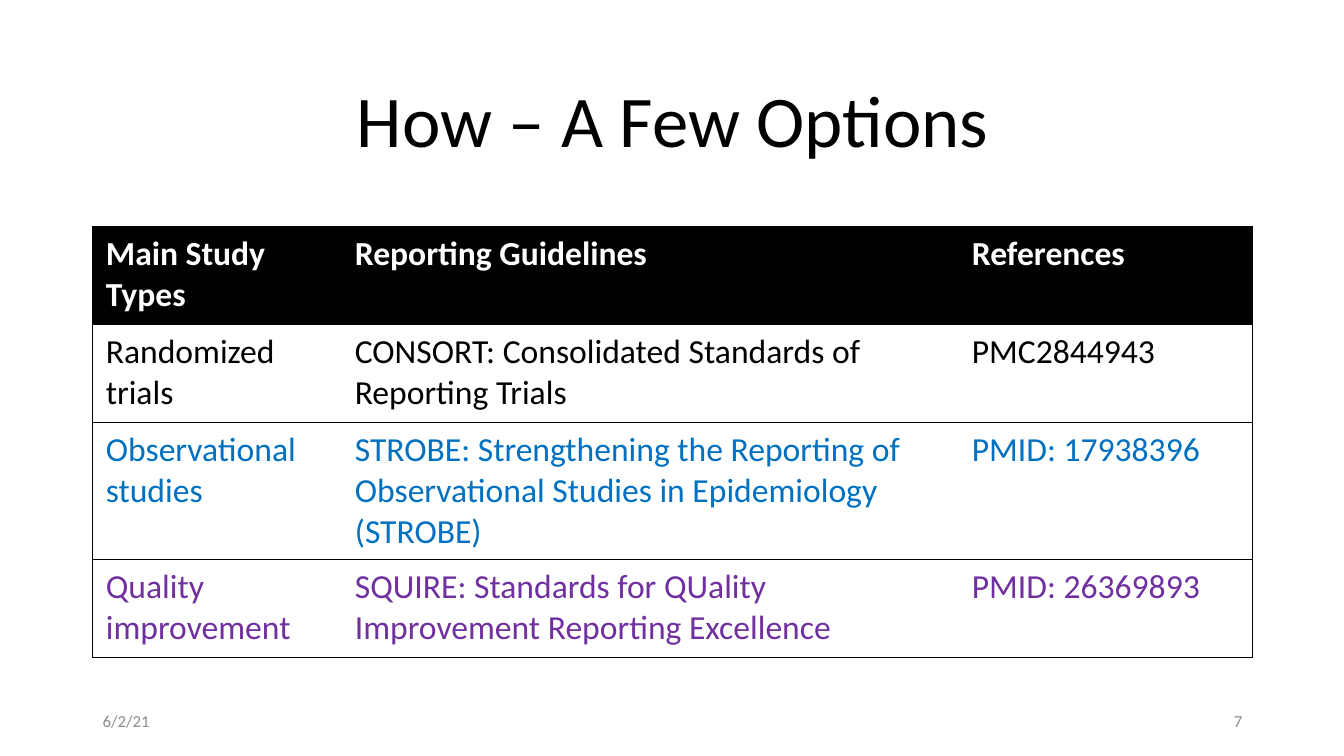
"""Build a slide that lists reporting guidelines by study type."""
from dataclasses import dataclass

from lxml import etree
from pptx import Presentation
from pptx.dml.color import RGBColor
from pptx.enum.text import MSO_ANCHOR, MSO_AUTO_SIZE, PP_ALIGN
from pptx.oxml.ns import qn
from pptx.util import Inches, Pt

LEFT, CENTER, RIGHT = PP_ALIGN.LEFT, PP_ALIGN.CENTER, PP_ALIGN.RIGHT
MIDDLE = MSO_ANCHOR.MIDDLE
NO_AUTOFIT = MSO_AUTO_SIZE.NONE


@dataclass(frozen=True)
class Theme:
    font: str = "Calibri"
    black: str = "000000"
    white: str = "FFFFFF"
    blue: str = "0070C0"
    purple: str = "7030A0"
    gray: str = "8C8C8C"
    title_size: int = 52
    table_size: int = 24
    footer_size: int = 12
    rule_width: float = 0.5


class SlideBuilder:
    def __init__(self, slide, theme):
        self.slide = slide
        self.theme = theme

    def add_text(self, frame, text, size, color, align=LEFT, bold=False):
        paragraph = frame.paragraphs[0]
        paragraph.alignment = align
        run = paragraph.add_run()
        run.text = text
        run.font.name = self.theme.font
        run.font.size = Pt(size)
        run.font.bold = bold
        run.font.color.rgb = RGBColor.from_string(color)
        return paragraph

    def title(self, text, left, top, width, height):
        heading = self.slide.shapes.title
        heading.left, heading.top = Inches(left), Inches(top)
        heading.width, heading.height = Inches(width), Inches(height)
        frame = heading.text_frame
        frame.auto_size = NO_AUTOFIT
        frame.vertical_anchor = MIDDLE
        paragraph = self.add_text(frame, text, self.theme.title_size,
                                  self.theme.black, CENTER)
        paragraph.line_spacing = 0.9

    def footer(self, text, left, align):
        box = self.slide.shapes.add_textbox(
            Inches(left), Inches(6.95), Inches(3), Inches(0.4))
        frame = box.text_frame
        frame.word_wrap = True
        frame.vertical_anchor = MIDDLE
        self.add_text(frame, text, self.theme.footer_size, self.theme.gray,
                      align)

    def borders(self, cell, visible_sides):
        properties = cell._tc.get_or_add_tcPr()
        for position, side in enumerate("LRTB"):
            line = etree.Element(qn(f"a:ln{side}"),
                                 w=str(Pt(self.theme.rule_width)))
            if side in visible_sides:
                fill = etree.SubElement(line, qn("a:solidFill"))
                etree.SubElement(fill, qn("a:srgbClr"), val=self.theme.black)
            else:
                etree.SubElement(line, qn("a:noFill"))
            properties.insert(position, line)

    def table(self, rows, colors, left, top, column_widths, row_heights):
        grid = self.slide.shapes.add_table(
            len(rows), len(column_widths), Inches(left), Inches(top),
            Inches(sum(column_widths)), Inches(sum(row_heights))).table
        for column, width in zip(grid.columns, column_widths):
            column.width = Inches(width)
        for row, height in zip(grid.rows, row_heights):
            row.height = Inches(height)
        last_column = len(column_widths) - 1
        for row_index, (texts, color) in enumerate(zip(rows, colors)):
            is_header = row_index == 0
            background = self.theme.black if is_header else self.theme.white
            for column_index, text in enumerate(texts):
                cell = grid.cell(row_index, column_index)
                cell.margin_left = cell.margin_right = Inches(0.13)
                cell.margin_top = cell.margin_bottom = Inches(0.07)
                cell.fill.solid()
                cell.fill.fore_color.rgb = RGBColor.from_string(background)
                outer_sides = {0: "L", last_column: "R"}.get(column_index, "")
                self.borders(cell, "TB" + outer_sides)
                self.add_text(cell.text_frame, text, self.theme.table_size,
                              color, bold=is_header)


def main():
    theme = Theme()
    deck = Presentation()
    deck.slide_width, deck.slide_height = Inches(13.33), Inches(7.5)
    title_only = deck.slide_layouts[5]
    builder = SlideBuilder(deck.slides.add_slide(title_only), theme)

    guidelines = [
        ("Main Study Types", "Reporting Guidelines", "References"),
        ("Randomized trials",
         "CONSORT: Consolidated Standards of Reporting Trials",
         "PMC2844943"),
        ("Observational studies",
         "STROBE: Strengthening the Reporting of Observational Studies "
         "in Epidemiology (STROBE)",
         "PMID: 17938396"),
        ("Quality improvement",
         "SQUIRE: Standards for QUality Improvement Reporting Excellence",
         "PMID: 26369893"),
    ]
    row_colors = [theme.white, theme.black, theme.blue, theme.purple]

    builder.title("How – A Few Options", 0.92, 0.61, 11.5, 1.24)
    builder.table(guidelines, row_colors, 0.92, 2.25,
                  [2.47, 6.12, 2.91], [0.97, 0.97, 1.36, 0.97])
    builder.footer("6/2/21", 0.92, LEFT)
    builder.footer("7", 9.42, RIGHT)
    deck.save("out.pptx")


if __name__ == "__main__":
    main()
